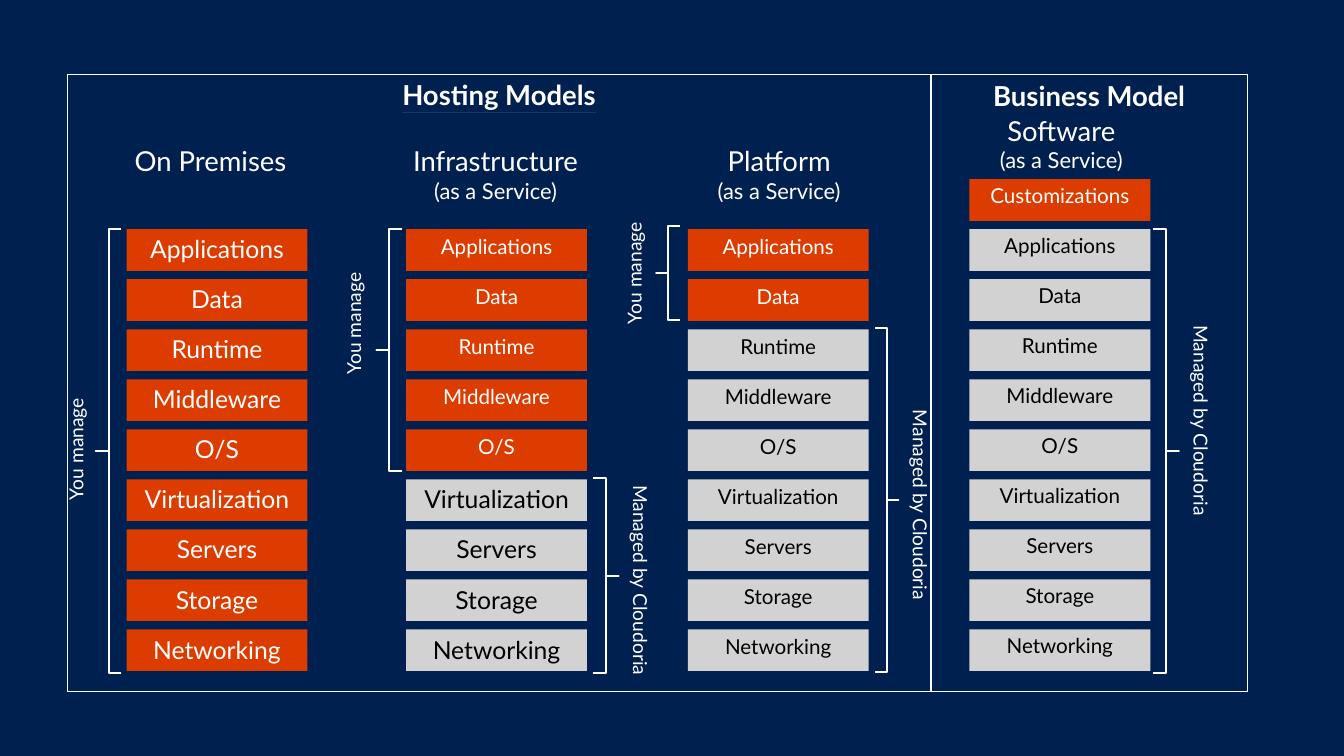
from lxml import etree
from pptx import Presentation
from pptx.dml.color import RGBColor
from pptx.enum import shapes, text
from pptx.oxml import ns
from pptx.util import Pt

NAVY = RGBColor(0x00, 0x20, 0x50)
FAINT = RGBColor(0x1A, 0x36, 0x62)
ORANGE = RGBColor(0xDC, 0x3C, 0x00)
GREY = RGBColor(0xD2, 0xD2, 0xD2)
WHITE = RGBColor(0xFF, 0xFF, 0xFF)
BLACK = RGBColor(0x00, 0x00, 0x00)
FONT = "Lato"

LAYERS = ["Applications", "Data", "Runtime", "Middleware", "O/S",
          "Virtualization", "Servers", "Storage", "Networking"]
SERVICE = "(as a Service)"
YOU, VENDOR = "You manage", "Managed by Cloudoria"

# title, underline colour, frame left, frame width, title top
PANELS = [
    ("Hosting Models", FAINT, 49, 629.3, 56.9),
    ("Business Model", NAVY, 678.3, 230.4, 57.6),
]

# own: how many layers the customer runs; sizes: text of own and vendor layers
# braces: caption, left, top, width, height; then caption left, caption top
MODELS = [
    dict(heading=["On Premises"], center=153.4, heading_top=105.1,
         left=92.2, own=9, sizes=(18, 18), inset=3.6, extra=None,
         braces=[(YOU, 69.8, 167, 18.7, 323.3, 43.2, 285.1)]),
    dict(heading=["Infrastructure", SERVICE], center=361.1, heading_top=105.1,
         left=295.9, own=5, sizes=(15, 18), inset=3.6, extra=None,
         braces=[(YOU, 274.3, 167, 18.7, 176.4, 245.5, 193.7),
                 (VENDOR, 432, 348.5, 18.7, 141.8, 447.1, 346.3)]),
    dict(heading=["Platform", SERVICE], center=567.7, heading_top=105.1,
         left=501.1, own=2, sizes=(15, 15), inset=3.6, extra=None,
         braces=[(YOU, 478.1, 164.9, 17.3, 68.4, 450, 157),
                 (VENDOR, 637.9, 239, 16.6, 250.6, 650.9, 291.6)]),
    dict(heading=["Software", SERVICE], center=773.3, heading_top=82.8,
         left=706.3, own=0, sizes=(15, 15), inset=2.9, extra="Customizations",
         braces=[(VENDOR, 840.2, 167, 18.7, 323.3, 855.5, 230)]),
]

LAYER_TOP, LAYER_PITCH, LAYER_W, LAYER_H = 167, 36.45, 131.8, 30.3
HEADING_W, HEADING_H = 180, 51.1
CAPTION_W = 31.7
CAPTION_H = {YOU: 84.2, VENDOR: 148.3}


def write(shape, lines, color, inset=0, bold=False):
    """Fill a shape with centred (words, size) lines and return the last run."""
    frame = shape.text_frame
    frame.word_wrap = True
    frame.vertical_anchor = text.MSO_ANCHOR.TOP
    frame.margin_left = frame.margin_right = 0
    frame.margin_top = frame.margin_bottom = Pt(inset)
    for index, (words, size) in enumerate(lines):
        line = frame.add_paragraph() if index else frame.paragraphs[0]
        line.alignment = text.PP_ALIGN.CENTER
        run = line.add_run()
        run.text = words
        run.font.size = Pt(size)
        run.font.name = FONT
        run.font.bold = bold
        run.font.color.rgb = color
    return run


def add_shape(slide, kind, box, fill=None, line_width=None):
    shape = slide.shapes.add_shape(kind, *map(Pt, box))
    shape.shadow.inherit = False
    if fill is None:
        shape.fill.background()
    else:
        shape.fill.solid()
        shape.fill.fore_color.rgb = fill
    if line_width is None:
        shape.line.fill.background()
    else:
        shape.line.color.rgb = WHITE
        shape.line.width = Pt(line_width)
    return shape


def add_text(slide, box, lines, **options):
    return write(slide.shapes.add_textbox(*map(Pt, box)), lines, WHITE, **options)


def add_panel(slide, title, underline, left, width, title_top):
    add_shape(slide, shapes.MSO_SHAPE.RECTANGLE, (left, 54, width, 450), line_width=0.85)
    run = add_text(slide, (left, title_top, width, HEADING_H), [(title, 20)], bold=True)
    run.font.underline = True
    underline_fill = etree.Element(ns.qn("a:uFill"))
    solid = etree.SubElement(underline_fill, ns.qn("a:solidFill"))
    etree.SubElement(solid, ns.qn("a:srgbClr"), val=str(underline))
    run.font._element.find(ns.qn("a:latin")).addprevious(underline_fill)


def add_layer(slide, model, row, words, is_own):
    box = (model["left"], LAYER_TOP + row * LAYER_PITCH, LAYER_W, LAYER_H)
    layer = add_shape(slide, shapes.MSO_SHAPE.RECTANGLE, box, ORANGE if is_own else GREY)
    size = model["sizes"][0 if is_own else 1]
    write(layer, [(words, size)], WHITE if is_own else BLACK, inset=model["inset"])


def add_brace(slide, caption, left, top, width, height, caption_left, caption_top):
    """Draw a square brace, opening towards its layers, with an upright caption."""
    brace = add_shape(slide, shapes.MSO_SHAPE.LEFT_BRACE, (left, top, width, height),
                      line_width=1.5)
    brace.adjustments[0] = 0
    brace.adjustments[1] = 0.5
    if caption == VENDOR:
        brace._element.spPr.find(ns.qn("a:xfrm")).set("flipH", "1")
    label = slide.shapes.add_textbox(Pt(caption_left), Pt(caption_top),
                                     Pt(CAPTION_W), Pt(CAPTION_H[caption]))
    write(label, [(caption, 14)], WHITE, inset=3.6)
    label.text_frame.margin_left = label.text_frame.margin_right = Pt(7.2)
    label.text_frame.margin_top = label.text_frame.margin_bottom = Pt(3.6)
    label.text_frame.word_wrap = False
    direction = "vert270" if caption == YOU else "eaVert"
    label.text_frame._txBody.bodyPr.set("vert", direction)


def add_model(slide, model):
    heading_box = (model["center"] - HEADING_W / 2, model["heading_top"],
                   HEADING_W, HEADING_H)
    add_text(slide, heading_box, list(zip(model["heading"], (20, 16))))
    for row, words in enumerate(LAYERS):
        add_layer(slide, model, row, words, row < model["own"])
    if model["extra"]:
        add_layer(slide, model, -1, model["extra"], True)
    for brace in model["braces"]:
        add_brace(slide, *brace)


def main():
    deck = Presentation()
    deck.slide_width, deck.slide_height = Pt(979.2), Pt(550.8)
    slide = deck.slides.add_slide(deck.slide_layouts[6])
    slide.background.fill.solid()
    slide.background.fill.fore_color.rgb = NAVY
    for panel in PANELS:
        add_panel(slide, *panel)
    for model in MODELS:
        add_model(slide, model)
    deck.save("out.pptx")


if __name__ == "__main__":
    main()
